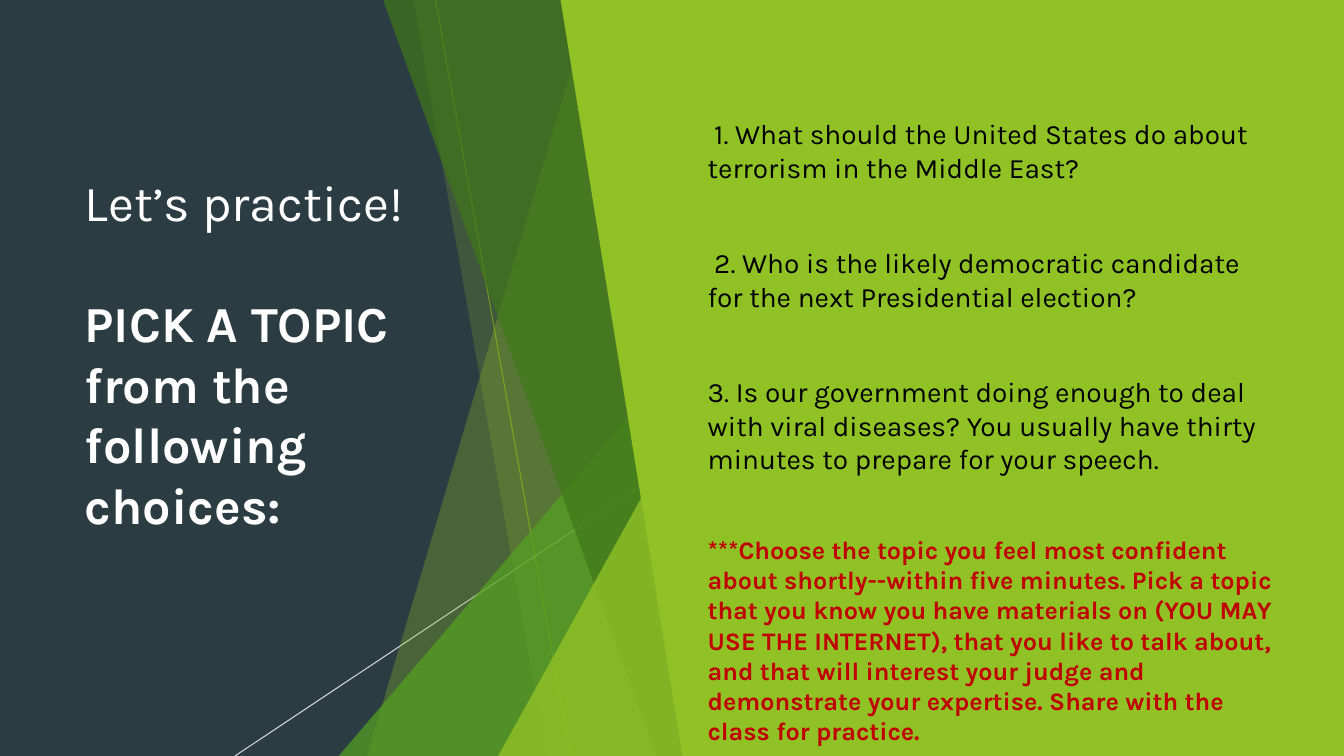
from dataclasses import dataclass

from pptx import Presentation
from pptx.dml.color import RGBColor
from pptx.enum.shapes import MSO_CONNECTOR, MSO_SHAPE
from pptx.enum.text import MSO_ANCHOR, MSO_AUTO_SIZE, PP_ALIGN
from pptx.oxml.ns import qn
from pptx.oxml.xmlchemy import OxmlElement
from pptx.util import Inches, Pt

STRAIGHT = MSO_CONNECTOR.STRAIGHT
TRIANGLE = MSO_SHAPE.ISOSCELES_TRIANGLE
TOP, MIDDLE = MSO_ANCHOR.TOP, MSO_ANCHOR.MIDDLE
LEFT = PP_ALIGN.LEFT
NO_AUTOFIT = MSO_AUTO_SIZE.NONE
TITLE_ONLY_LAYOUT = 5

FONT = "Karla"
DARK, LIME, LEAF, FOREST = "2C3C43", "90C226", "54A021", "3F7819"
WHITE, BLACK, RED = "FFFFFF", "000000", "C00000"
WIDTH, HEIGHT = 13.33, 7.5
EDGE = 6.92  # right side shared by the facets


@dataclass
class Ray:
    start: tuple[float, float]
    end: tuple[float, float]
    color: str
    opacity: int = 100


@dataclass
class Facet:
    """Four-sided band given by its top and bottom edges."""
    top_left: float
    top_right: float
    bottom_left: float
    bottom_right: float
    color: str
    opacity: int = 100


@dataclass
class Corner:
    """Right triangle standing on the slide bottom, against EDGE."""
    left: float
    top: float
    color: str
    opacity: int


@dataclass
class Passage:
    text: str
    size: int
    color: str
    bold: bool = False
    space_before: int = 0


DECORATION = [
    Ray((4.32, 0), (5.66, HEIGHT), "6C921D"),
    Ray((7.54, 4.03), (2.33, HEIGHT), WHITE, 80),
    Facet(5.87, EDGE, 3.64, EDGE, LIME, 30),
    Facet(4.1, EDGE, 5.42, EDGE, LIME, 20),
    Corner(3.36, 3.33, LEAF, 72),
    Facet(3.8, EDGE, 6.51, EDGE, FOREST, 70),
    Corner(4.94, 3.93, LIME, 80),
    Facet(5.56, WIDTH, 6.77, WIDTH, LIME),
]

TITLE = [
    Passage("Let’s practice!", 36, WHITE),
    Passage("PICK A TOPIC from the following choices:", 36, WHITE, True, 43),
]

TOPICS = [
    Passage(" 1. What should the United States do about terrorism in the "
            "Middle East?", 20, BLACK),
    Passage(" 2. Who is the likely democratic candidate for the next "
            "Presidential election?", 20, BLACK, False, 44),
    Passage("3. Is our government doing enough to deal with viral diseases? "
            "You usually have thirty minutes to prepare for your speech.",
            20, BLACK, False, 44),
    Passage("***Choose the topic you feel most confident about "
            "shortly--within five minutes. Pick a topic that you know you "
            "have materials on (YOU MAY USE THE INTERNET), that you like to "
            "talk about, and that will interest your judge and demonstrate "
            "your expertise. Share with the class for practice.",
            18, RED, True, 42),
]


def rgb(color: str) -> RGBColor:
    return RGBColor.from_string(color)


def set_opacity(shape, percent: int) -> None:
    if percent == 100:
        return
    for color in shape._element.spPr.iter(qn("a:srgbClr")):
        alpha = OxmlElement("a:alpha")
        alpha.set("val", str(percent * 1000))
        color.append(alpha)


def paint(shape, color: str, opacity: int) -> None:
    shape.shadow.inherit = False
    shape.fill.solid()
    shape.fill.fore_color.rgb = rgb(color)
    shape.line.fill.background()
    set_opacity(shape, opacity)


def draw_ray(slide, ray: Ray) -> None:
    points = [Inches(value) for value in ray.start + ray.end]
    connector = slide.shapes.add_connector(STRAIGHT, *points)
    connector.line.color.rgb = rgb(ray.color)
    connector.line.width = Pt(0.75)
    connector._element.spPr.append(OxmlElement("a:effectLst"))
    set_opacity(connector, ray.opacity)


def draw_facet(slide, facet: Facet) -> None:
    bottom = Inches(HEIGHT)
    builder = slide.shapes.build_freeform(Inches(facet.top_left), 0)
    builder.add_line_segments([
        (Inches(facet.top_right), 0),
        (Inches(facet.bottom_right), bottom),
        (Inches(facet.bottom_left), bottom),
    ])
    paint(builder.convert_to_shape(), facet.color, facet.opacity)


def draw_corner(slide, corner: Corner) -> None:
    shape = slide.shapes.add_shape(
        TRIANGLE, Inches(corner.left), Inches(corner.top),
        Inches(EDGE - corner.left), Inches(HEIGHT - corner.top))
    shape.adjustments[0] = 1
    paint(shape, corner.color, corner.opacity)


def write(shape, passages: list[Passage], anchor: MSO_ANCHOR) -> None:
    frame = shape.text_frame
    frame.word_wrap = True
    frame.auto_size = NO_AUTOFIT
    frame.vertical_anchor = anchor
    frame.text = "\n".join(passage.text for passage in passages)
    for paragraph, passage in zip(frame.paragraphs, passages):
        paragraph.alignment = LEFT
        paragraph.line_spacing = 1.0
        paragraph.space_before = Pt(passage.space_before)
        for run in paragraph.runs:
            run.font.name = FONT
            run.font.size = Pt(passage.size)
            run.font.bold = passage.bold
            run.font.color.rgb = rgb(passage.color)


def main() -> None:
    presentation = Presentation()
    presentation.slide_width = Inches(WIDTH)
    presentation.slide_height = Inches(HEIGHT)
    layout = presentation.slide_layouts[TITLE_ONLY_LAYOUT]
    slide = presentation.slides.add_slide(layout)

    # Background and faceted decoration
    slide.background.fill.solid()
    slide.background.fill.fore_color.rgb = rgb(DARK)
    painters = {Ray: draw_ray, Facet: draw_facet, Corner: draw_corner}
    for element in DECORATION:
        painters[type(element)](slide, element)

    # Title
    title = slide.shapes.title
    title.left, title.top = Inches(0.74), Inches(0.67)
    title.width, title.height = Inches(4.2), Inches(5.66)
    write(title, TITLE, MIDDLE)

    # Topics and instructions
    topics = slide.shapes.add_textbox(
        Inches(6.92), Inches(1.11), Inches(5.8), Inches(6.27))
    write(topics, TOPICS, TOP)

    presentation.save("out.pptx")


if __name__ == "__main__":
    main()
